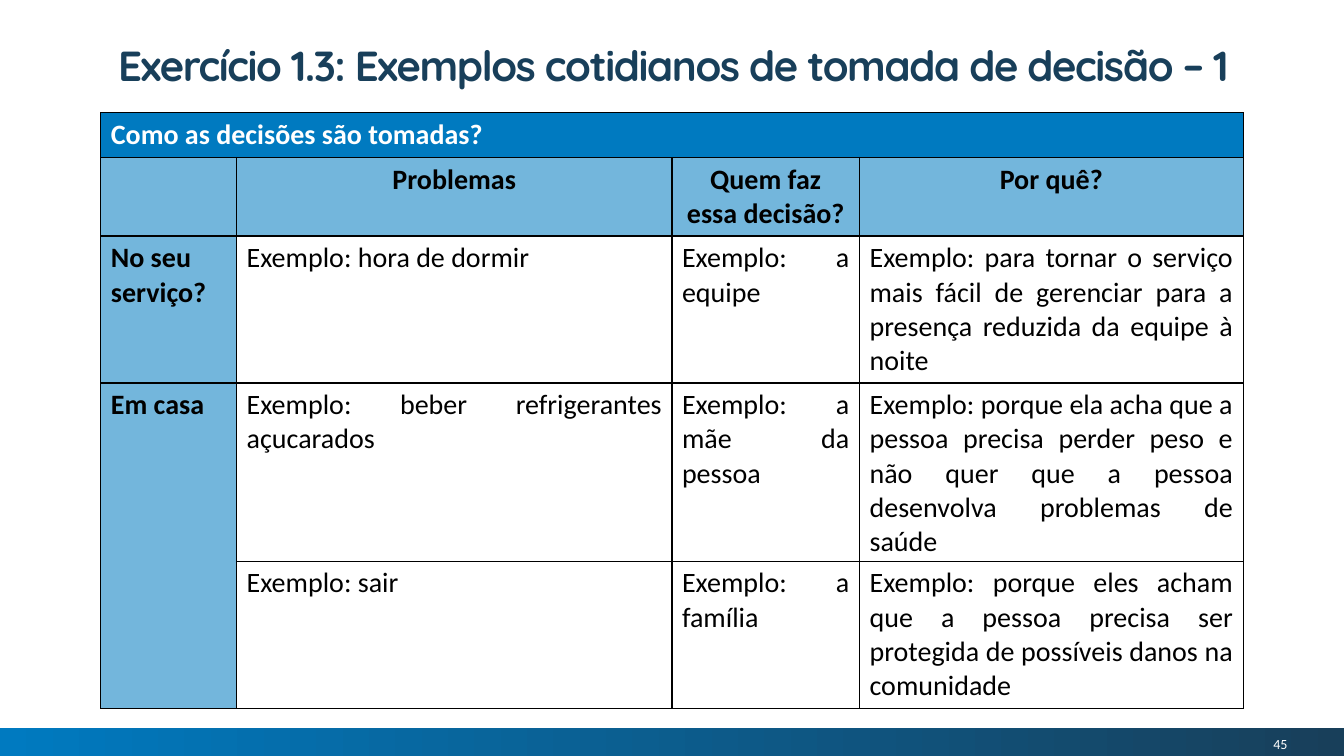
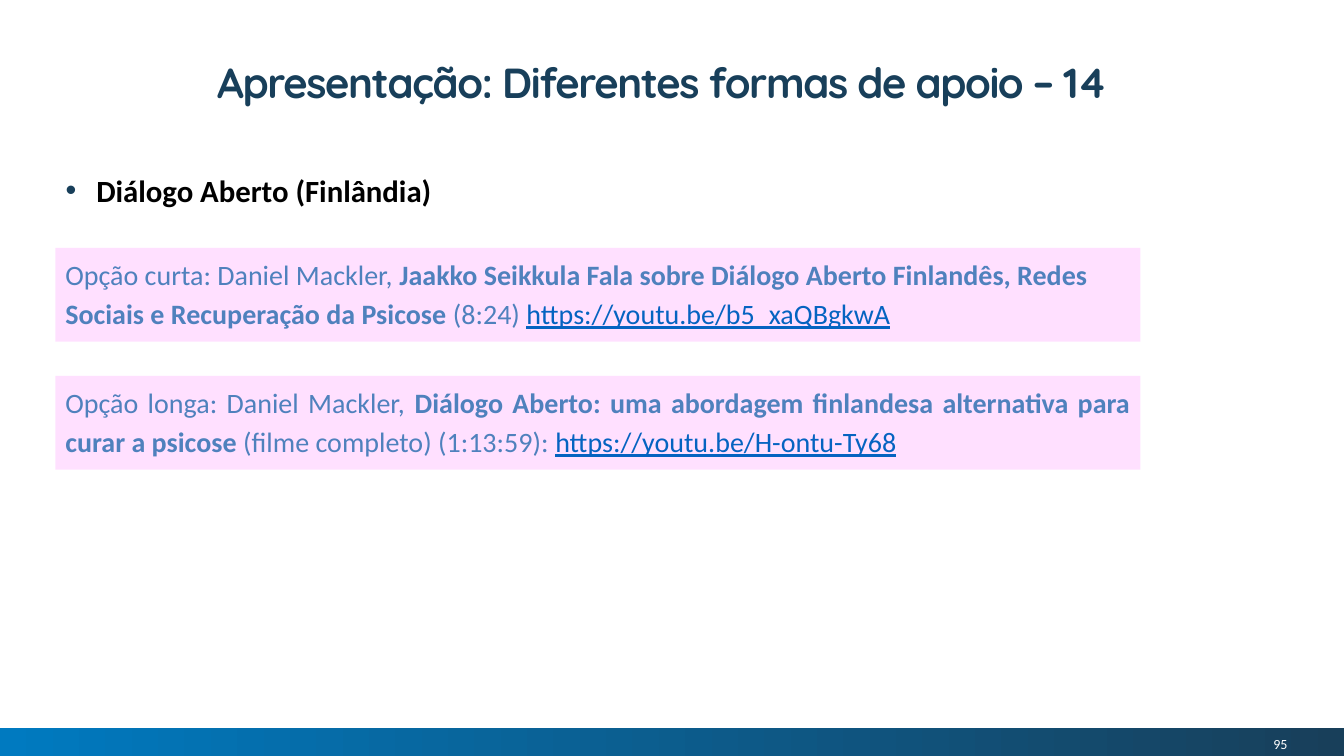
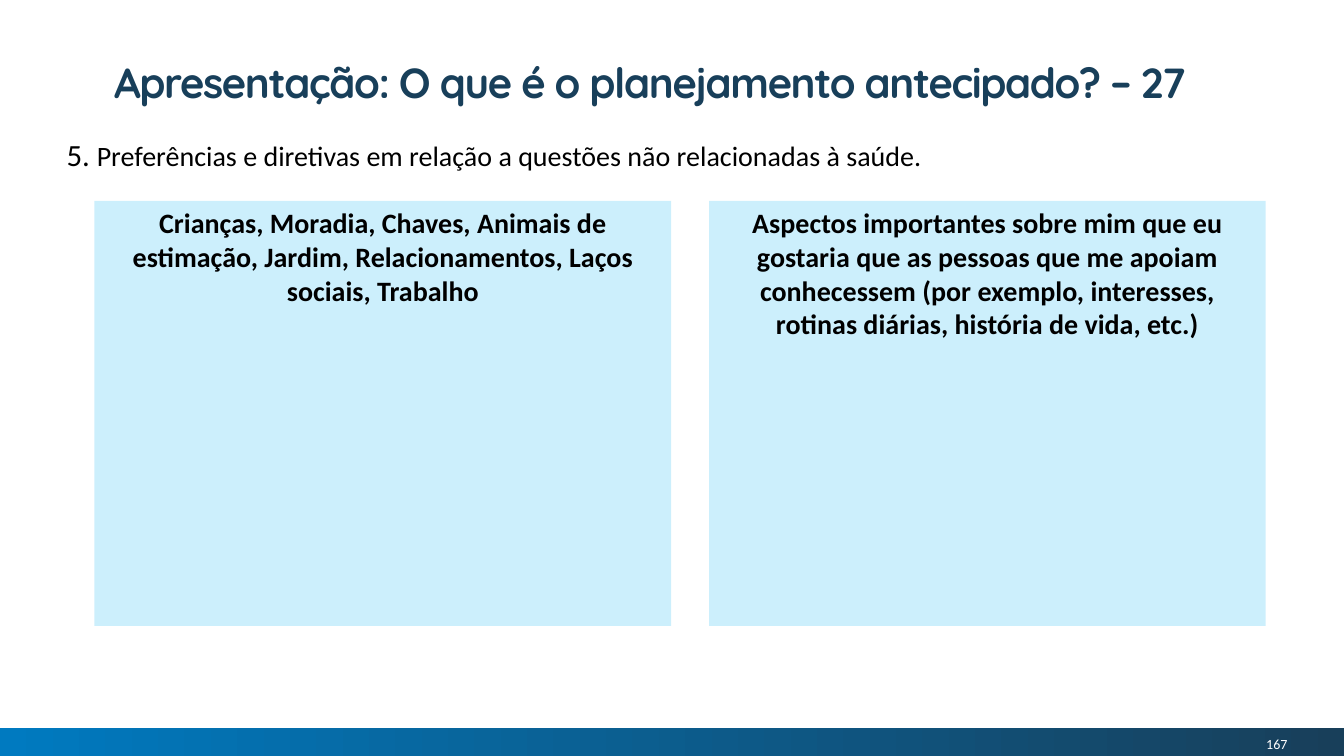
import pptx
import pptx.dml.color
import pptx.enum.shapes
import pptx.enum.text
import pptx.oxml
import pptx.oxml.ns
import pptx.util
from lxml import etree

Pt = pptx.util.Pt
ALIGN = pptx.enum.text.PP_ALIGN
ANCHOR = pptx.enum.text.MSO_ANCHOR
RECTANGLE = pptx.enum.shapes.MSO_SHAPE.RECTANGLE
qn = pptx.oxml.ns.qn

COLORS = {
    "blue": "007AC0",
    "navy": "183F5A",
    "sky": "73B6DC",
    "white": "FFFFFF",
    "black": "000000",
    "pink": "FF99FF",
    "cyan": "00B0F0",
    "steel": "4F81BD",
    "link": "0563C1",
}
TITLE_FONT, TEXT_FONT = "Quicksand", "Calibri"
SLIDE_WIDTH, SLIDE_HEIGHT, BAND_HEIGHT = 960, 540, 20
TITLE_ONLY, TITLE_AND_BODY = 5, 1


def rgb(name):
    return pptx.dml.color.RGBColor.from_string(COLORS[name])


def points(box):
    return [Pt(length) for length in box]


def move(placeholder, box):
    placeholder.left, placeholder.top, placeholder.width, placeholder.height = points(box)


def style(run, size=20, color="black", bold=False, underline=False, font=TEXT_FONT):
    run.font.name = font
    run.font.size = Pt(size)
    run.font.bold = bold
    run.font.underline = underline
    run.font.color.rgb = rgb(color)


def write(paragraph, pieces):
    """Add one run for each (text, style options) pair."""
    for text, options in pieces:
        run = paragraph.add_run()
        run.text = text
        style(run, **options)


def add_panel(slide, box, color, opacity=None):
    """Add a borderless rectangle, with opacity in percent."""
    panel = slide.shapes.add_shape(RECTANGLE, *points(box))
    panel.shadow.inherit = False
    panel.line.fill.background()
    panel.fill.solid()
    panel.fill.fore_color.rgb = rgb(color)
    if opacity:
        tint = panel.fill._xPr.find(qn("a:solidFill"))[0]
        etree.SubElement(tint, qn("a:alpha"), val=str(opacity * 1000))
    panel.text_frame.word_wrap = True
    panel.text_frame.vertical_anchor = ANCHOR.TOP
    return panel


def add_footer(slide, page):
    top = SLIDE_HEIGHT - BAND_HEIGHT
    band = add_panel(slide, (0, top, SLIDE_WIDTH, BAND_HEIGHT), "blue")
    band.fill.gradient()
    band.fill.gradient_angle = 0
    for stop, color in zip(band.fill.gradient_stops, ("blue", "navy")):
        stop.color.rgb = rgb(color)

    number = slide.shapes.add_textbox(*points((790, top + 3, 129.6, 17))).text_frame
    number.margin_left = number.margin_right = number.margin_top = number.margin_bottom = 0
    number.word_wrap = True
    number.vertical_anchor = ANCHOR.MIDDLE
    number.text = str(page)
    number.paragraphs[0].alignment = ALIGN.RIGHT
    style(number.paragraphs[0].runs[0], size=10, color="white")


def start_slide(deck, layout, page, title, title_box):
    """Add a slide with the shared footer and title style."""
    slide = deck.slides.add_slide(deck.slide_layouts[layout])
    add_footer(slide, page)
    move(slide.shapes.title, title_box)
    frame = slide.shapes.title.text_frame
    frame.text = title
    frame.word_wrap = True
    frame.auto_size = pptx.enum.text.MSO_AUTO_SIZE.NONE
    frame.vertical_anchor = ANCHOR.TOP
    heading = frame.paragraphs[0]
    heading.alignment = ALIGN.CENTER
    heading.line_spacing = Pt(33)
    style(heading.runs[0], size=30, color="navy", bold=True, font=TITLE_FONT)
    heading.runs[0]._r.get_or_add_rPr().set("spc", "-100")
    return slide


def add_body(slide, box, pieces, bullet=False):
    body = slide.placeholders[1]
    move(body, box)
    paragraph = body.text_frame.paragraphs[0]
    properties = paragraph._p.get_or_add_pPr()
    indent = Pt(22) if bullet else 0
    properties.set("marL", str(indent))
    properties.set("indent", str(-indent))
    if bullet:
        bullet_color = etree.SubElement(properties, qn("a:buClr"))
        etree.SubElement(bullet_color, qn("a:srgbClr"), val=COLORS["navy"])
        etree.SubElement(properties, qn("a:buChar"), char="•")
    else:
        etree.SubElement(properties, qn("a:buNone"))
    paragraph.space_before = Pt(0)
    paragraph.space_after = Pt(12)
    write(paragraph, pieces)


def add_borders(cell):
    properties = cell._tc.get_or_add_tcPr()
    for side in ("lnL", "lnR", "lnT", "lnB"):
        line = etree.SubElement(properties, qn("a:" + side), w=str(Pt(1)))
        fill = etree.SubElement(line, qn("a:solidFill"))
        etree.SubElement(fill, qn("a:srgbClr"), val=COLORS["black"])


def format_cell(cell, text, fill, color, bold, alignment):
    add_borders(cell)
    cell.fill.solid()
    cell.fill.fore_color.rgb = rgb(fill)
    cell.text_frame.text = text
    paragraph = cell.text_frame.paragraphs[0]
    paragraph.alignment = alignment
    for run in paragraph.runs:
        style(run, color=color, bold=bold)


def add_decision_table(slide, left, top):
    rows = [
        ("Como as decisões são tomadas?", "", "", ""),
        ("", "Problemas", "Quem faz\vessa decisão?", "Por quê?"),
        ("No seu serviço?", "Exemplo: hora de dormir", "Exemplo: a equipe",
         "Exemplo: para tornar o serviço mais fácil de gerenciar para a "
         "presença reduzida da equipe à noite"),
        ("Em casa", "Exemplo: beber refrigerantes açucarados",
         "Exemplo: a mãe da pessoa",
         "Exemplo: porque ela acha que a pessoa precisa perder peso e não "
         "quer que a pessoa desenvolva problemas de saúde"),
        ("", "Exemplo: sair", "Exemplo: a família",
         "Exemplo: porque eles acham que a pessoa precisa ser protegida de "
         "possíveis danos na comunidade"),
    ]
    widths = (97, 311, 134, 274)
    heights = (32, 56, 105, 105, 105)
    box = points((left, top, sum(widths), sum(heights)))
    table = slide.shapes.add_table(len(rows), len(widths), *box).table
    table.first_row = table.horz_banding = False
    for column, width in zip(table.columns, widths):
        column.width = Pt(width)
    for row, height in zip(table.rows, heights):
        row.height = Pt(height)

    for r, texts in enumerate(rows):
        for c, text in enumerate(texts):
            if r == 0:
                look = ("blue", "white", True, ALIGN.LEFT)
            elif r == 1:
                look = ("sky", "black", True, ALIGN.CENTER)
            elif c == 0:
                look = ("sky", "black", True, ALIGN.LEFT)
            else:
                look = ("white", "black", False, ALIGN.JUSTIFY)
            format_cell(table.cell(r, c), text, *look)
    table.cell(0, 0).merge(table.cell(0, 3))
    table.cell(3, 0).merge(table.cell(4, 0))


def add_video_option(slide, box, alignment, intro, film, length, address):
    paragraph = add_panel(slide, box, "pink", 30).text_frame.paragraphs[0]
    paragraph.alignment = alignment
    paragraph.line_spacing = 1.15
    write(paragraph, [
        (intro, {"color": "steel"}),
        (film, {"color": "steel", "bold": True}),
        (length, {"color": "steel"}),
        (address, {"color": "link", "underline": True}),
    ])


def add_topic(slide, box, topic):
    paragraph = add_panel(slide, box, "cyan", 20).text_frame.paragraphs[0]
    paragraph.alignment = ALIGN.CENTER
    write(paragraph, [(topic, {"bold": True})])


def build_decisions(deck):
    slide = start_slide(deck, TITLE_ONLY, 45,
                        "Exercício 1.3: Exemplos cotidianos de tomada de decisão – 1",
                        (6, 27.4, 950, 53))
    add_decision_table(slide, 72, 80.6)


def build_open_dialogue(deck):
    slide = start_slide(deck, TITLE_AND_BODY, 95,
                        "Apresentação: Diferentes formas de apoio – 14",
                        (33, 39.6, 880, 34))
    add_body(slide, (39.6, 119, 880, 354),
             [("Diálogo Aberto (Finlândia)", {"size": 22, "bold": True})], bullet=True)
    options = [
        (ALIGN.LEFT, "Opção curta: Daniel Mackler, ",
         "Jaakko Seikkula Fala sobre Diálogo Aberto Finlandês, Redes Sociais "
         "e Recuperação da Psicose ",
         "(8:24) ", "https://youtu.be/b5_xaQBgkwA"),
        (ALIGN.JUSTIFY, "Opção longa: Daniel Mackler, ",
         "Diálogo Aberto: uma abordagem finlandesa alternativa para curar a psicose ",
         "(filme completo) (1:13:59): ", "https://youtu.be/H-ontu-Ty68"),
    ]
    for i, option in enumerate(options):
        add_video_option(slide, (39.6, 177 + i * 91.5, 775, 67), *option)


def build_advance_planning(deck):
    slide = start_slide(deck, TITLE_AND_BODY, 167,
                        "Apresentação: O que é o planejamento antecipado? – 27",
                        (33, 39.6, 862.6, 34))
    add_body(slide, (40.3, 93, 880, 354), [
        ("5. ", {"size": 22}),
        ("Preferências e diretivas em relação a questões não relacionadas à saúde.", {}),
    ])
    topics = [
        (67.5, 412, "Crianças, Moradia, Chaves, Animais de estimação, Jardim, "
                    "Relacionamentos, Laços sociais, Trabalho"),
        (506.5, 397.5, "Aspectos importantes sobre mim que eu gostaria que as pessoas "
                       "que me apoiam conhecessem (por exemplo, interesses, rotinas "
                       "diárias, história de vida, etc.)"),
    ]
    for left, width, topic in topics:
        add_topic(slide, (left, 143.5, width, 303.5), topic)


def main():
    deck = pptx.Presentation()
    deck.slide_width, deck.slide_height = Pt(SLIDE_WIDTH), Pt(SLIDE_HEIGHT)
    build_decisions(deck)
    build_open_dialogue(deck)
    build_advance_planning(deck)
    deck.save("out.pptx")


if __name__ == "__main__":
    main()
